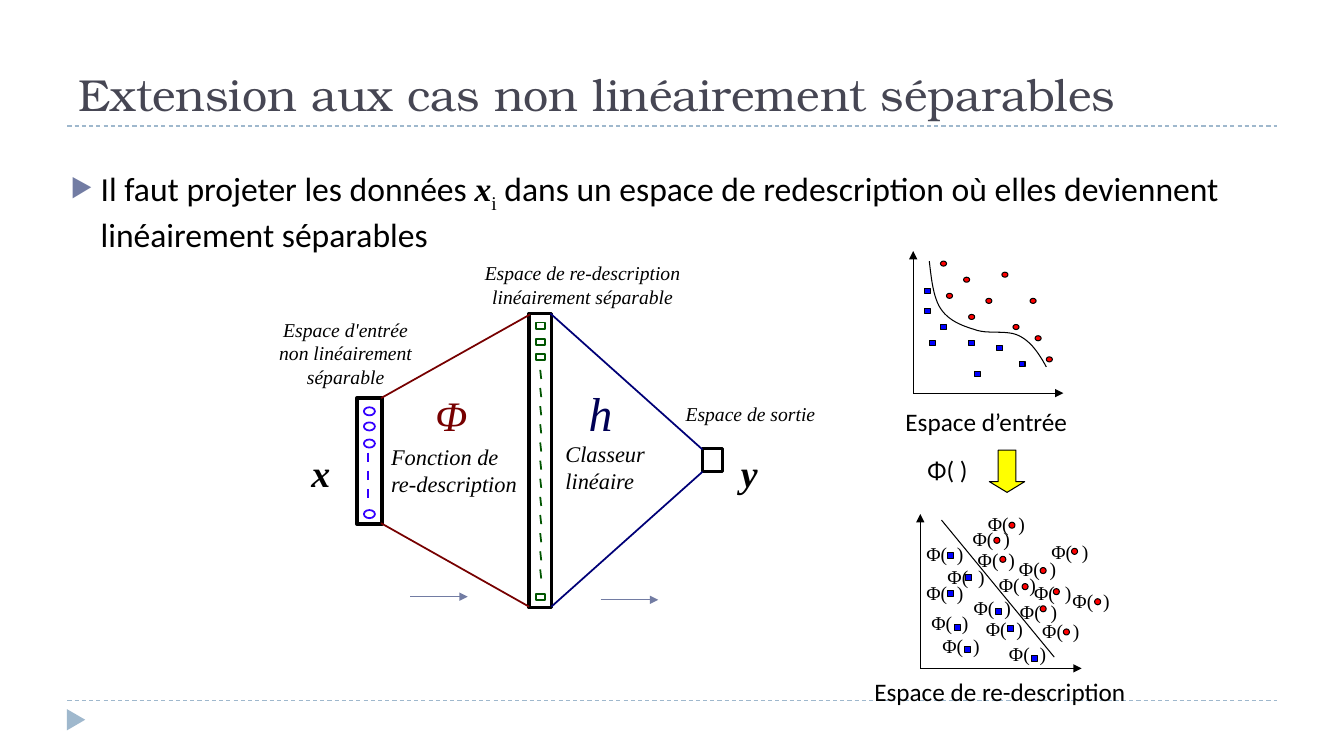
from lxml.etree import SubElement
from pptx import Presentation
from pptx.dml.color import RGBColor
from pptx.enum.dml import MSO_LINE
from pptx.enum.shapes import MSO_CONNECTOR, MSO_SHAPE
from pptx.enum.text import MSO_ANCHOR, MSO_AUTO_SIZE, PP_ALIGN
from pptx.oxml.ns import qn
from pptx.util import Pt

SERIF = "Times New Roman"
SANS = "Calibri"
LEFT, CENTER = PP_ALIGN.LEFT, PP_ALIGN.CENTER


def write(para, text, font=SANS, size=18, color="000000", bold=False, italic=False, baseline=None):
    span = para.add_run()
    span.text = text
    span.font.name = font
    span.font.size = Pt(size)
    span.font.bold = bold
    span.font.italic = italic
    span.font.color.rgb = RGBColor.from_string(color)
    if baseline:
        span.font._element.set("baseline", str(baseline))


def paint(item, line=None, width=0.75, fill=None, arrow=False, dash=None):
    if fill:
        item.fill.solid()
        item.fill.fore_color.rgb = RGBColor.from_string(fill)
    if line:
        item.line.color.rgb = RGBColor.from_string(line)
        item.line.width = Pt(width)
        item.line.dash_style = dash
    else:
        item.line.fill.background()
    properties = item._element.spPr
    if arrow:
        SubElement(properties.find(qn("a:ln")), qn("a:tailEnd"), type="triangle")
    SubElement(properties, qn("a:effectLst"))


deck = Presentation()
deck.slide_width, deck.slide_height = Pt(960), Pt(540)
page = deck.slides.add_slide(deck.slide_layouts[5])
shapes = page.shapes

# Title
title = shapes.title
title.left, title.top, title.width, title.height = Pt(49), Pt(12.2), Pt(867.6), Pt(77.8)
title.text_frame.vertical_anchor = MSO_ANCHOR.BOTTOM
title.text_frame.auto_size = MSO_AUTO_SIZE.NONE
title.text_frame.word_wrap = True
title_para = title.text_frame.paragraphs[0]
title_para.alignment = LEFT
write(title_para, "Extension aux cas non linéairement séparables",
      font="TeX Gyre Bonum", size=32, color="464653")

# Body with bullet
body = shapes.add_textbox(Pt(43.2), Pt(116.6), Pt(867.6), Pt(365.8))
body.text_frame.word_wrap = True
body_para = body.text_frame.paragraphs[0]
body_para.space_before = Pt(6)
bullet = body_para._p.get_or_add_pPr()
bullet.set("marL", str(Pt(21.6)))
bullet.set("indent", str(-Pt(21.6)))
SubElement(SubElement(bullet, qn("a:buClr")), qn("a:srgbClr"), val="727CA3")
SubElement(bullet, qn("a:buSzPct"), val="76000")
SubElement(bullet, qn("a:buChar"), char="▶")
write(body_para, "Il faut projeter les données ", size=24)
write(body_para, "x", font=SERIF, size=24, bold=True, italic=True)
write(body_para, "i", font=SERIF, size=24, baseline=-25000)
write(body_para, " dans un espace de redescription où elles deviennent linéairement séparables", size=24)

# Shapes of the network and the yellow arrow: kind, box, line, width, fill
RECT, OVAL = MSO_SHAPE.RECTANGLE, MSO_SHAPE.OVAL
figures = [
    (RECT, (254.9, 284.4, 18, 90), "000000", 2.5, "FFFFFF"),
    (RECT, (378, 223.9, 15.8, 210.2), "000000", 2.5, "FFFFFF"),
    (RECT, (501.8, 320.4, 14.4, 16.6), "000000", 2.5, "FFFFFF"),
]
for y in (290.9, 301.7, 313.9, 364.3):
    figures.append((OVAL, (259.9, y, 7.9, 5.8), "3300FF", 1.25, "FFFFFF"))
for y in (230.4, 241.9, 252.7, 424.1):
    figures.append((RECT, (383, y, 6.5, 4.7), "005500", 1.25, "FFFFFF"))

# Points of both plots, the second with the place of each label
input_points = [
    (OVAL, "FF0000", [(671.8, 186.5), (688.3, 198), (704.2, 213.1), (715.7, 194.4), (735.8, 213.1),
                      (676.1, 209.5), (691.9, 224.6), (723.6, 231.8), (739.4, 239.8), (747.4, 254.9)]),
    (RECT, "0000FF", [(660.2, 205.9), (660.2, 220.3), (671.8, 231.8), (663.8, 243.4),
                      (691.9, 243.4), (712.1, 247), (727.9, 258.5), (696.2, 265.7)]),
]
mapped_points = [
    (RECT, "0000FF", [(676.8, 394.6, 654.5, 383.8), (689.8, 410.4, 669.6, 400.3),
                      (711.4, 434.9, 688.3, 421.9), (720, 447.1, 697, 437),
                      (681.8, 446.4, 658.1, 432.7), (676.8, 421.9, 654.5, 411.1),
                      (736.6, 468, 713.5, 455), (689, 461.5, 666, 449.3)]),
    (OVAL, "FF0000", [(743, 405.4, 720.7, 394.6), (709.9, 383.8, 687.6, 373),
                      (730.1, 416.9, 706.3, 405.4), (714.2, 397.4, 691.2, 388.1),
                      (720.7, 373, 698.4, 362.2), (759.6, 449.3, 737.3, 438.5),
                      (765.4, 391.7, 743.8, 382.3), (752.4, 420.5, 731.5, 411.1),
                      (743, 432.7, 721.4, 424.8), (781.9, 427.7, 758.9, 416.9)]),
]
phi_places = []
for kind, color, points in input_points:
    for x, y in points:
        figures.append((kind, (x, y, 4.3, 3.6), "000000", 0.75, color))
for kind, color, points in mapped_points:
    for x, y, label_x, label_y in points:
        figures.append((kind, (x, y, 4.3, 4.3), "000000", 0.75, color))
        phi_places.append((label_x, label_y))

for kind, box, line, width, fill in figures:
    paint(shapes.add_shape(kind, *map(Pt, box)), line, width, fill)

# Footer triangle and mapping arrow
footer_mark = shapes.add_shape(MSO_SHAPE.ISOSCELES_TRIANGLE, Pt(46.8), Pt(507.6), Pt(15.1), Pt(13))
footer_mark.rotation = 90
paint(footer_mark, fill="9FB8CD")
mapping_arrow = shapes.add_shape(MSO_SHAPE.RIGHT_ARROW, Pt(704.2), Pt(324), Pt(30.2), Pt(25.2))
mapping_arrow.rotation = 90
mapping_arrow.adjustments[1] = 0.303
paint(mapping_arrow, "000000", 0.75, "FFFF00")

# Lines: ends, then format
rule = dict(line="9FB8CD", dash=MSO_LINE.DASH)
encoder = dict(line="770000", width=1.25)
classifier = dict(line="000077", width=1.25)
axis = dict(line="000000", arrow=True)
flow = dict(line="727CA3", arrow=True)
lines = [
    ((48.2, 90, 912.2, 90), rule),
    ((48.2, 500.4, 912.2, 500.4), rule),
    ((272.2, 284.4, 378.7, 224.6), encoder),
    ((272.2, 373.7, 378, 433.4), encoder),
    ((393.1, 223.9, 501.8, 321.1), classifier),
    ((393.8, 433.4, 501.8, 337), classifier),
    ((652.3, 280.8, 652.3, 179.3), axis),
    ((652.3, 280.8, 759.6, 280.8), axis),
    ((657.4, 477.4, 657.4, 367.2), axis),
    ((657.4, 477.4, 772.6, 477.4), axis),
    ((672.5, 371.5, 753.1, 469.4), dict(line="000000")),
    ((293, 426.2, 334.1, 426.2), flow),
    ((429.1, 428.4, 470.2, 428.4), flow),
]
for x1, x2, top, count, color in [(262.8, 262.8, 323.3, 3, "3300FF"), (385.9, 386.6, 264.2, 12, "005500")]:
    for step in range(count):
        y = top + 12.96 * step
        lines.append(((x1, y, x2, y + 6.5), dict(line=color, width=1.25)))
for ends, style in lines:
    paint(shapes.add_connector(MSO_CONNECTOR.STRAIGHT, *map(Pt, ends)), **style)

# Curved boundary, sampled from three Bézier segments
start = (663.8, 186.5)
segments = [
    ((665.3, 199.4), (666.7, 212.4), (671.8, 220.3)),
    ((677.5, 229), (686.9, 232.6), (696.2, 235.4)),
    ((704.9, 239), (719.3, 235.4), (727.9, 239.8)),
    ((736.6, 244.1), (742.3, 252.7), (747.4, 262.1)),
]
boundary = shapes.build_freeform(*map(Pt, start))
for first, second, end in segments:
    vertices = []
    for step in range(1, 13):
        t = step / 12
        vertices.append([Pt((1 - t) ** 3 * a + 3 * t * (1 - t) ** 2 * b + 3 * t ** 2 * (1 - t) * c + t ** 3 * d)
                         for a, b, c, d in zip(start, first, second, end)])
    boundary.add_line_segments(vertices, close=False)
    start = end
curve = boundary.convert_to_shape()
curve.fill.background()
paint(curve, "000000")

# Labels: text, box, alignment, wrap, inset, format
note = dict(font=SERIF, size=14, italic=True)
role = dict(font=SERIF, size=16, italic=True)
vector = dict(font=SERIF, size=27, bold=True, italic=True)
labels = [
    ("Espace d'entrée non linéairement séparable", (195.8, 226.8, 102.2, 51.1), CENTER, True, False, note),
    ("Espace de re-description linéairement séparable", (322.6, 186.5, 187.2, 33.8), CENTER, True, False, note),
    ("Espace de sortie", (481, 287.3, 110.2, 17.3), CENTER, True, False, note),
    ("Φ", (311, 277.9, 23, 36), LEFT, False, False, dict(font=SERIF, size=30, color="770000", italic=True)),
    ("h", (420.5, 274.3, 17.3, 41), LEFT, False, False, dict(font=SERIF, size=34, color="000055", italic=True)),
    ("Fonction de re-description", (279.4, 316.8, 98.6, 38.9), LEFT, True, False, role),
    ("Classeur linéaire", (403.9, 314.6, 64.8, 38.9), LEFT, True, False, role),
    ("x", (222.5, 321.1, 13.7, 32.4), LEFT, False, False, vector),
    ("y", (529.2, 321.1, 12.2, 32.4), LEFT, False, False, vector),
    ("Espace d’entrée", (638.6, 286.6, 131.8, 28.8), CENTER, False, True, {}),
    ("Φ( )", (655.2, 321.1, 43.2, 28.8), CENTER, False, True, {}),
    ("Espace de re-description", (617, 479.5, 194.4, 28.8), CENTER, False, True, {}),
]
for x, y in phi_places:
    labels.append(("Φ(  )", (x, y, 41, 24.2), CENTER, False, True, dict(font=SERIF, size=14)))
for text, box, alignment, wrap, inset, style in labels:
    frame = shapes.add_textbox(*map(Pt, box)).text_frame
    frame.word_wrap = wrap
    if not inset:
        frame.margin_left = frame.margin_right = frame.margin_top = frame.margin_bottom = 0
    frame.paragraphs[0].alignment = alignment
    write(frame.paragraphs[0], text, **style)

deck.save("out.pptx")
